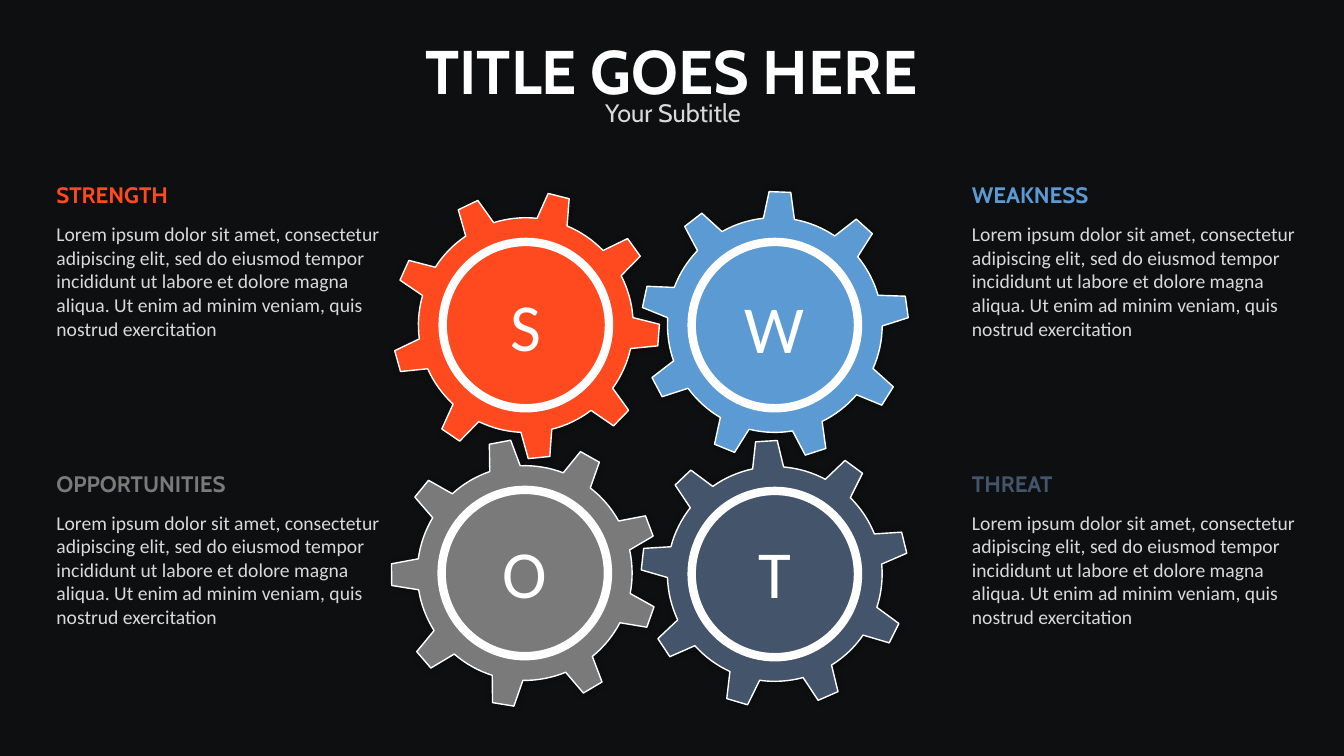
from math import cos, radians, sin

from lxml import etree
from pptx import Presentation
from pptx.dml.color import RGBColor
from pptx.enum.shapes import MSO_SHAPE
from pptx.enum.text import MSO_ANCHOR, MSO_AUTO_SIZE, PP_ALIGN
from pptx.oxml.ns import qn
from pptx.util import Inches, Pt

OVAL = MSO_SHAPE.OVAL
TOP = MSO_ANCHOR.TOP
NO_AUTOFIT = MSO_AUTO_SIZE.NONE
CENTER, LEFT = PP_ALIGN.CENTER, PP_ALIGN.LEFT


class Theme:
    background = RGBColor.from_string("0E0F11")
    white = RGBColor.from_string("FFFFFF")
    body = RGBColor.from_string("D9D9D9")
    strength = RGBColor.from_string("FE4A1E")
    weakness = RGBColor.from_string("5C9AD3")
    opportunities = RGBColor.from_string("7A7A7A")
    threat = RGBColor.from_string("44546B")
    heading_font, body_font = "Cabin", "Calibri"
    title_size, subtitle_size = Pt(44), Pt(18)
    heading_size, body_size, letter_size = Pt(16), Pt(14), Pt(48)


def write(paragraph, text, font, size, color, bold=False, align=LEFT):
    paragraph.text = text
    paragraph.alignment = align
    paragraph.font.name = font
    paragraph.font.size = size
    paragraph.font.color.rgb = color
    paragraph.font.bold = bold


def gear_outline(center_x, center_y, turn):
    """Points of a nine-tooth gear: each tooth, then the arc to the next."""
    root, tip = 1.065, 1.325
    tooth = [(-8.3, root), (-4.65, tip), (4.65, tip), (8.3, root)]
    arc = [(8.3 + 23.4 * step / 8, root) for step in range(1, 8)]
    points = []
    for number in range(9):
        for offset, radius in tooth + arc:
            angle = radians(turn - 9.8 + 40 * number + offset)
            points.append((Inches(center_x + radius * cos(angle)),
                           Inches(center_y + radius * sin(angle))))
    return points


prs = Presentation()
prs.slide_width, prs.slide_height = Inches(13.33), Inches(7.5)
slide = prs.slides.add_slide(prs.slide_layouts[5])
slide.background.fill.solid()
slide.background.fill.fore_color.rgb = Theme.background

# Title and subtitle
title = slide.shapes.title
title.left, title.top = Inches(3.65), Inches(0.28)
title.width, title.height = Inches(6.02), Inches(0.84)
title.text_frame.vertical_anchor = TOP
title.text_frame.auto_size = NO_AUTOFIT
write(title.text_frame.paragraphs[0], "TITLE GOES HERE", Theme.heading_font,
      Theme.title_size, Theme.white, True, CENTER)

subtitle = slide.shapes.add_textbox(Inches(4.41), Inches(0.92), Inches(4.53), Inches(0.4))
subtitle.text_frame.word_wrap = True
write(subtitle.text_frame.paragraphs[0], "Your Subtitle", Theme.heading_font,
      Theme.subtitle_size, Theme.body, align=CENTER)

# Four descriptions
description = ("Lorem ipsum dolor sit amet, consectetur adipiscing elit, sed do eiusmod "
               "tempor incididunt ut labore et dolore magna aliqua. Ut enim ad minim "
               "veniam, quis nostrud exercitation")
left_column, right_column = 0.56, 9.64
upper_row, lower_row = 1.8, 4.66
topics = [
    ("STRENGTH", Theme.strength, left_column, upper_row),
    ("WEAKNESS", Theme.weakness, right_column, upper_row),
    ("THREAT", Theme.threat, right_column, lower_row),
    ("OPPORTUNITIES", Theme.opportunities, left_column, lower_row),
]
for heading, color, x, y in topics:
    topic = slide.shapes.add_textbox(Inches(x), Inches(y), Inches(3.3), Inches(1.58)).text_frame
    topic.word_wrap = True
    topic.margin_left = topic.margin_right = topic.margin_top = topic.margin_bottom = 0
    write(topic.paragraphs[0], heading, Theme.heading_font, Theme.heading_size, color, True)
    details = topic.add_paragraph()
    details.space_before = Pt(10)
    write(details, description, Theme.body_font, Theme.body_size, Theme.body)

# Gears: letter, colour, centre, turn in degrees, top of the letter
gears = [
    ("S", Theme.strength, 5.215, 3.225, 14.1, 2.77),
    ("W", Theme.weakness, 7.685, 3.225, 82, 2.79),
    ("T", Theme.threat, 7.685, 5.695, -3.8, 5.22),
    ("O", Theme.opportunities, 5.205, 5.685, -10.9, 5.22),
]
ring_size, letter_width = 1.65, 0.82
for initial, color, x, y, turn, letter_top in gears:
    outline = gear_outline(x, y, turn)
    builder = slide.shapes.build_freeform(*outline[0], scale=1.0)
    builder.add_line_segments(outline[1:], close=True)
    gear = builder.convert_to_shape()
    ring = slide.shapes.add_shape(OVAL, Inches(x - ring_size / 2), Inches(y - ring_size / 2),
                                  Inches(ring_size), Inches(ring_size))
    for part, line_width in ((gear, 1), (ring, 6)):
        part.shadow.inherit = False
        part.fill.solid()
        part.fill.fore_color.rgb = color
        part.line.color.rgb = Theme.white
        part.line.width = Pt(line_width)

    # Soft black glow behind the gear
    effects = gear._element.spPr.find(qn("a:effectLst"))
    glow = etree.SubElement(effects, qn("a:outerShdw"), blurRad=str(Pt(5)), algn="ctr",
                            rotWithShape="0")
    black = etree.SubElement(glow, qn("a:srgbClr"), val="000000")
    etree.SubElement(black, qn("a:alpha"), val="40000")

    letter = slide.shapes.add_textbox(Inches(x - letter_width / 2), Inches(letter_top),
                                      Inches(letter_width), Inches(0.91))
    letter.text_frame.word_wrap = True
    write(letter.text_frame.paragraphs[0], initial, Theme.body_font,
          Theme.letter_size, Theme.white, align=CENTER)

prs.save("out.pptx")
